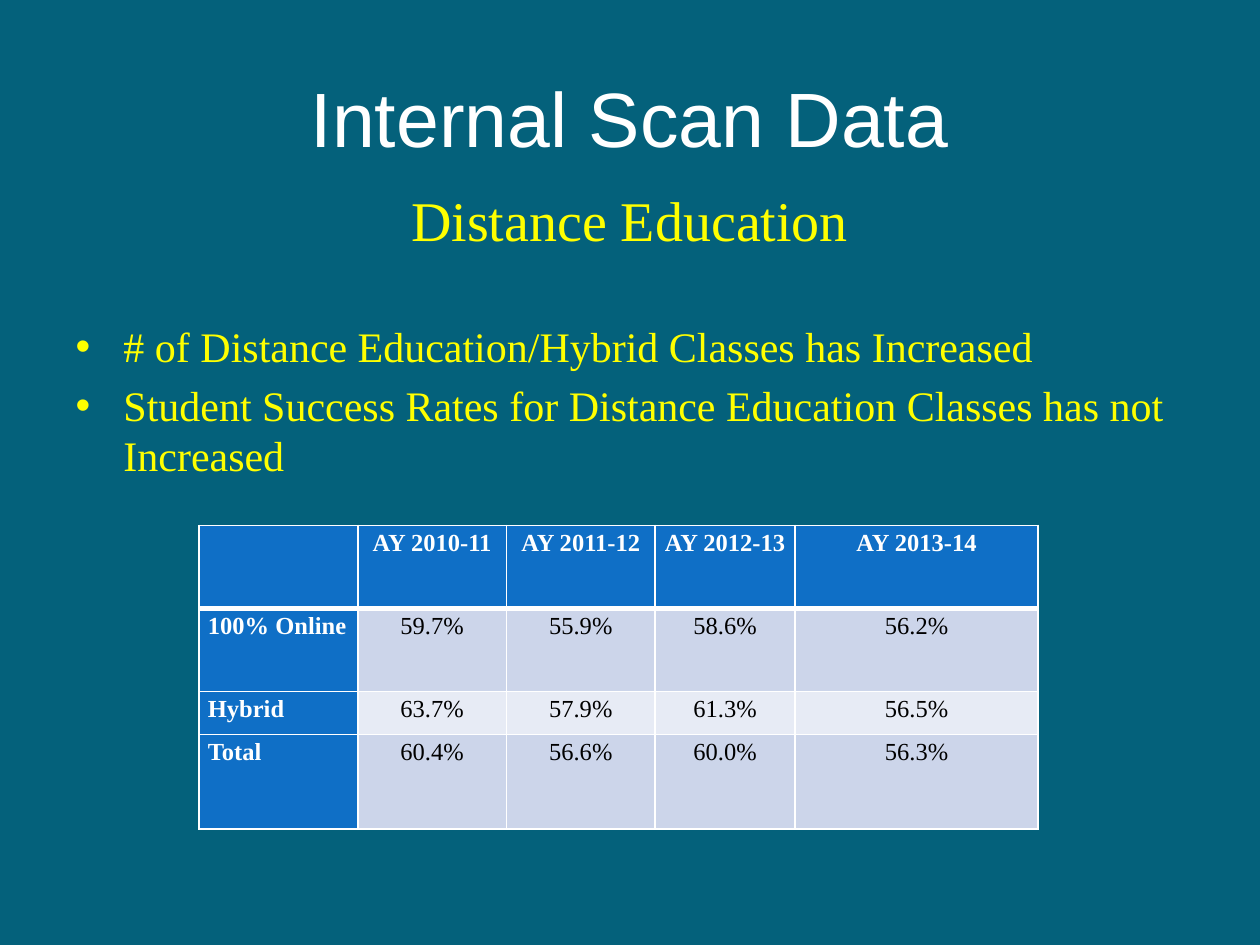
from lxml import etree
from pptx import Presentation
from pptx.dml.color import RGBColor
from pptx.enum.text import MSO_ANCHOR, PP_ALIGN
from pptx.oxml.ns import qn
from pptx.util import Inches, Pt

SERIF = "Times New Roman"
BLUE, WHITE, YELLOW = "0F6FC6", "FFFFFF", "FFFF00"


def style(p, size, color, font=SERIF, bold=False, align=PP_ALIGN.LEFT):
    p.alignment = align
    for r in p.runs:
        r.font.name, r.font.size, r.font.bold = font, Pt(size), bold
        r.font.color.rgb = RGBColor.from_string(color)


def add_borders(cell, bottom):
    """Draw white lines on all four sides; bottom is that line's width in points."""
    tcPr = cell._tc.get_or_add_tcPr()
    for i, (side, width) in enumerate(zip("LRTB", (1, 1, 1, bottom))):
        ln = etree.Element(qn(f"a:ln{side}"), w=str(Pt(width)))
        fill = etree.SubElement(ln, qn("a:solidFill"))
        etree.SubElement(fill, qn("a:srgbClr"), val=WHITE)
        tcPr.insert(i, ln)


prs = Presentation()
prs.slide_width, prs.slide_height = Inches(10), Inches(7.5)
s = prs.slides.add_slide(prs.slide_layouts[1])
s.background.fill.solid()
s.background.fill.fore_color.rgb = RGBColor.from_string("04617B")

# Title
title = s.shapes.title
title.left, title.top, title.width, title.height = map(Inches, (0.5, 0.3, 9, 1.25))
title.text_frame.text = "Internal Scan Data"
title.text_frame.vertical_anchor = MSO_ANCHOR.MIDDLE
style(title.text_frame.paragraphs[0], 44, WHITE, "Arial", align=PP_ALIGN.CENTER)

# Subheading and bullets
body = s.placeholders[1]
body.left, body.top, body.width, body.height = map(Inches, (0.5, 1.42, 9, 5.28))
tf = body.text_frame
tf.text = "\n".join([
    "Distance Education",
    "# of Distance Education/Hybrid Classes has Increased",
    "Student Success Rates for Distance Education Classes has not Increased",
])
heading, *bullets = tf.paragraphs
style(heading, 32, YELLOW, align=PP_ALIGN.CENTER)
heading.space_before = Pt(6.4)
pPr = heading._p.get_or_add_pPr()
pPr.set("marL", "0")
pPr.set("indent", "0")
etree.SubElement(pPr, qn("a:buNone"))
for p, gap in zip(bullets, (39, 4.8)):
    style(p, 24, YELLOW)
    p.space_before = Pt(gap)
    pPr = p._p.get_or_add_pPr()
    pPr.set("marL", str(Inches(0.38)))
    pPr.set("indent", str(Inches(-0.38)))
    etree.SubElement(pPr, qn("a:buChar"), char="•")

# Success rates
rows = [
    ["", "AY 2010-11", "AY 2011-12", "AY 2012-13", "AY 2013-14"],
    ["100% Online", "59.7%", "55.9%", "58.6%", "56.2%"],
    ["Hybrid", "63.7%", "57.9%", "61.3%", "56.5%"],
    ["Total", "60.4%", "56.6%", "60.0%", "56.3%"],
]
table = s.shapes.add_table(
    len(rows), len(rows[0]), Inches(1.58), Inches(4.17), Inches(6.67), Inches(2.42)
).table
for col, width in zip(table.columns, (1.26, 1.18, 1.18, 1.11, 1.93)):
    col.width = Inches(width)
for row, height in zip(table.rows, (0.66, 0.66, 0.34, 0.75)):
    row.height = Inches(height)

for i, row in enumerate(rows):
    for j, text in enumerate(row):
        cell = table.cell(i, j)
        is_header = i == 0 or j == 0
        band = "CCD5EA" if i % 2 else "E7EBF5"
        cell.fill.solid()
        cell.fill.fore_color.rgb = RGBColor.from_string(BLUE if is_header else band)
        cell.margin_left = cell.margin_right = Inches(0.07)
        cell.margin_top = cell.margin_bottom = 0
        cell.text_frame.text = text
        p = cell.text_frame.paragraphs[0]
        p.line_spacing = 1.15
        style(p, 14, WHITE if is_header else "000000", bold=is_header,
              align=PP_ALIGN.CENTER if j else PP_ALIGN.LEFT)
        add_borders(cell, 1 if i else 3)

prs.save("out.pptx")
